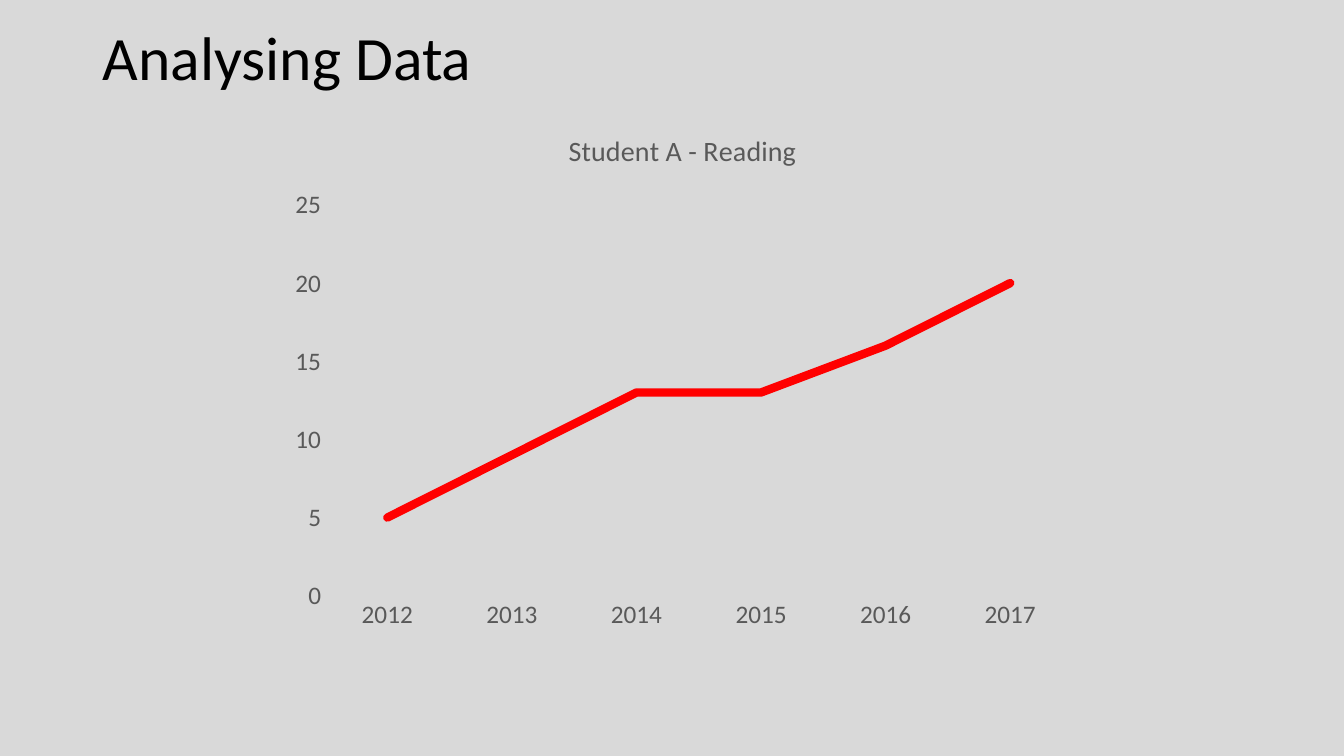
from lxml.etree import SubElement
from pptx import Presentation
from pptx.chart.chart import Chart
from pptx.chart.data import CategoryChartData
from pptx.dml.color import RGBColor
from pptx.enum.chart import XL_CHART_TYPE, XL_MARKER_STYLE, XL_TICK_MARK
from pptx.enum.text import MSO_ANCHOR, PP_ALIGN
from pptx.oxml.ns import qn
from pptx.util import Inches, Pt

FONT = "Calibri"
BACKGROUND = "D9D9D9"
LABEL_GREY = "595959"
READING_RED = "FF0000"
READING_LEVELS = {"2012": 5, "2013": 9, "2014": 13, "2015": 13, "2016": 16, "2017": 20}
# Inner plot area as fractions of the chart
PLOT_LAYOUT = {"x": 0.06, "y": 0.18, "w": 0.92, "h": 0.74}


def colour(hex_code: str) -> RGBColor:
    return RGBColor.from_string(hex_code)


def style_font(font, size: float, hex_code: str) -> None:
    font.name = FONT
    font.size = Pt(size)
    font.bold = False
    font.color.rgb = colour(hex_code)


def style_line(line, width: float, hex_code: str) -> None:
    line.color.rgb = colour(hex_code)
    line.width = Pt(width)


def place_plot(chart: Chart) -> None:
    """Fix the inner plot area, which python-pptx leaves automatic."""
    plot_area = chart.plots[0]._element.getparent()
    layout = plot_area.find(qn("c:layout"))
    if layout is None:
        layout = SubElement(plot_area, qn("c:layout"))
        plot_area.insert(0, layout)
    manual = SubElement(layout, qn("c:manualLayout"))
    settings = {"layoutTarget": "inner", "xMode": "edge", "yMode": "edge", **PLOT_LAYOUT}
    for tag, value in settings.items():
        SubElement(manual, qn(f"c:{tag}")).set("val", str(value))


def add_reading_chart(slide) -> None:
    reading_data = CategoryChartData()
    reading_data.categories = list(READING_LEVELS)
    reading_data.add_series("Series 1", list(READING_LEVELS.values()))
    chart = slide.shapes.add_chart(
        XL_CHART_TYPE.LINE, Inches(2.74), Inches(1.09), Inches(8.06), Inches(5.24), reading_data
    ).chart
    style_font(chart.font, 10, "000000")
    chart.has_legend = False
    place_plot(chart)

    # Chart title
    chart.has_title = True
    chart.chart_title.include_in_layout = False
    heading = chart.chart_title.text_frame.paragraphs[0]
    heading.text = "Student A - Reading"
    style_font(heading.font, 20, LABEL_GREY)

    # Axes
    years, levels = chart.category_axis, chart.value_axis
    for axis in (years, levels):
        axis.major_tick_mark = axis.minor_tick_mark = XL_TICK_MARK.NONE
        style_font(axis.tick_labels.font, 18, LABEL_GREY)
    style_line(years.format.line, 0.75, BACKGROUND)
    levels.format.line.fill.background()
    levels.minimum_scale, levels.maximum_scale, levels.major_unit = 0, 25, 5
    levels.has_major_gridlines = True
    style_line(levels.major_gridlines.format.line, 0.75, BACKGROUND)

    # Reading line
    chart.plots[0].vary_by_categories = False
    reading = chart.plots[0].series[0]
    reading.smooth = False
    reading.marker.style = XL_MARKER_STYLE.NONE
    style_line(reading.format.line, 6, READING_RED)
    reading._element.find(".//" + qn("a:ln")).set("cap", "rnd")


def main() -> None:
    presentation = Presentation()
    presentation.slide_width = Inches(13.33)
    presentation.slide_height = Inches(7.5)
    slide = presentation.slides.add_slide(presentation.slide_layouts[5])
    slide.background.fill.solid()
    slide.background.fill.fore_color.rgb = colour(BACKGROUND)

    # Slide title
    title = slide.shapes.title
    title.left, title.top = Inches(0.92), Inches(0.12)
    title.width, title.height = Inches(11.5), Inches(0.97)
    title.text_frame.vertical_anchor = MSO_ANCHOR.MIDDLE
    heading = title.text_frame.paragraphs[0]
    heading.text = "Analysing Data"
    heading.alignment = PP_ALIGN.LEFT
    heading.line_spacing = 0.9
    style_font(heading.font, 44, "000000")

    add_reading_chart(slide)
    presentation.save("out.pptx")


if __name__ == "__main__":
    main()
